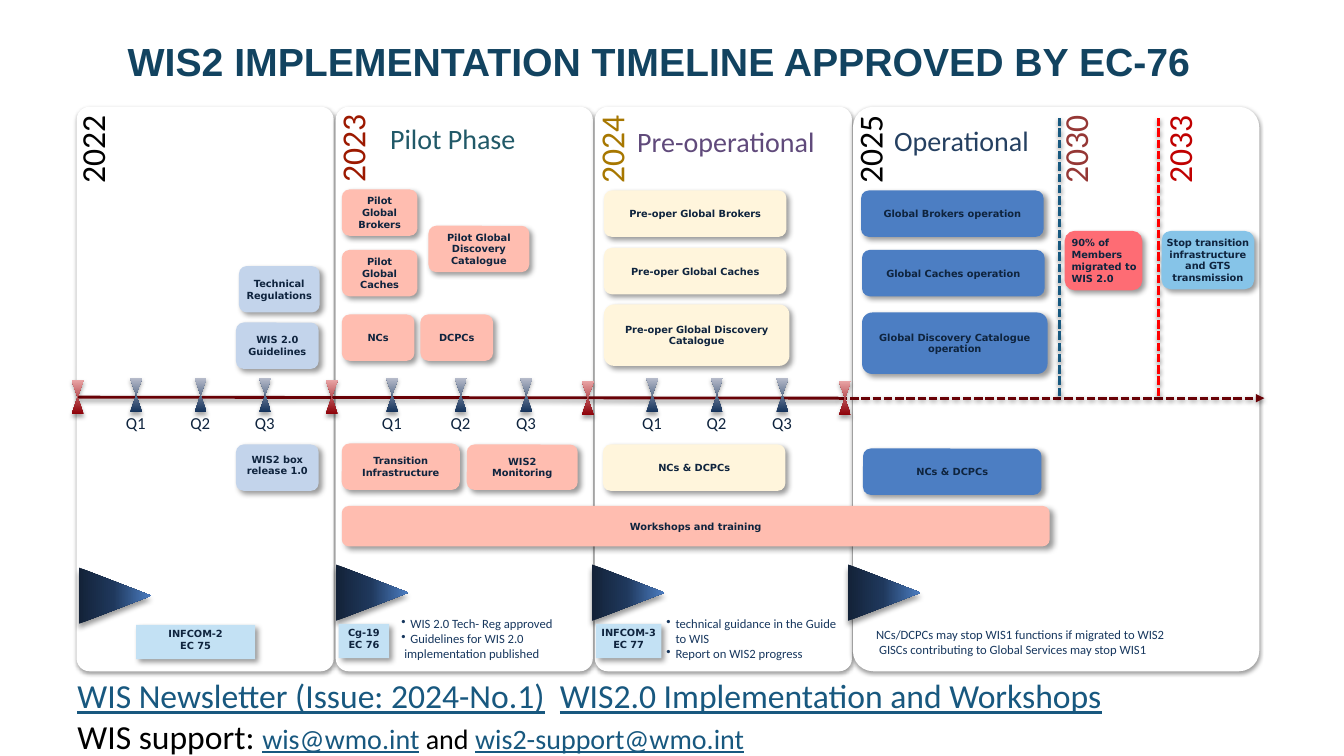
"""Build the WIS2 implementation timeline slide."""
import dataclasses
import typing

import lxml.etree
import pptx
import pptx.dml.color
import pptx.enum.dml
import pptx.enum.shapes
import pptx.enum.text
import pptx.oxml.ns
import pptx.util

Inches = pptx.util.Inches
Pt = pptx.util.Pt
RGBColor = pptx.dml.color.RGBColor
Preset = pptx.enum.shapes.MSO_SHAPE
Align = pptx.enum.text.PP_ALIGN
Anchor = pptx.enum.text.MSO_ANCHOR
qn = pptx.oxml.ns.qn

BLACK = RGBColor(0x00, 0x00, 0x00)
WHITE = RGBColor(0xFF, 0xFF, 0xFF)
INK = RGBColor(0x0F, 0x24, 0x3E)
NOTE = RGBColor(0x17, 0x37, 0x5E)
TITLE = RGBColor(0x12, 0x43, 0x60)
LINK = RGBColor(0x18, 0x58, 0x7F)
PINK = RGBColor(0xFF, 0xBD, 0xB0)
CREAM = RGBColor(0xFF, 0xF5, 0xDC)
BLUE = RGBColor(0x4C, 0x7E, 0xC3)
PALE_BLUE = RGBColor(0xC3, 0xD4, 0xEB)
ICE = RGBColor(0xC3, 0xE1, 0xF4)
SKY = RGBColor(0x86, 0xC4, 0xE8)
CORAL = RGBColor(0xFE, 0x6C, 0x74)
AXIS = RGBColor(0x69, 0x01, 0x06)
TEAL_LINE = RGBColor(0x18, 0x59, 0x80)
RED_LINE = RGBColor(0xFF, 0x00, 0x00)
RUST = RGBColor(0x9C, 0x19, 0x00)
GOLD = RGBColor(0xA7, 0x77, 0x00)
TEAL = RGBColor(0x21, 0x59, 0x68)
PURPLE = RGBColor(0x60, 0x4A, 0x7B)
NAVY = RGBColor(0x25, 0x40, 0x61)
BRICK = RGBColor(0x95, 0x37, 0x35)
DARK_RED = RGBColor(0xC0, 0x00, 0x00)

Area = tuple[float, float, float, float]
QUARTER_STOPS = ((0, "14325B"), (100, "B6BBCA"))
YEAR_STOPS = ((0, "8D0007"), (100, "E8A4A5"))
FLAG_STOPS = ((0, "132238"), (48, "1F385C"), (100, "4C7EC3"))
DEFAULT_INSETS = (0.1, 0.05, 0.1, 0.05)
SIDELESS_INSETS = (0, 0.05, 0, 0.05)
BASE_INSETS = (0, 0, 0, 0.05)


class Run(typing.NamedTuple):
    text: str
    size: float
    color: RGBColor
    underline: bool = False
    spacing: float = 0


class Line(typing.NamedTuple):
    runs: tuple[Run, ...]
    bullet: bool = False
    indent: float = 0


class Shadow(typing.NamedTuple):
    alpha: int
    blur: float
    distance: float
    angle: int


PANEL_SHADOW = Shadow(38, 3.1, 1.6, 90)
MARKER_SHADOW = Shadow(35, 3.1, 1.8, 90)
CARD_SHADOW = Shadow(40, 4, 3, 45)
FLAG_SHADOW = Shadow(40, 4, 3, 90)


@dataclasses.dataclass(frozen=True)
class Card:
    area: Area
    text: str
    fill: RGBColor
    insets: Area = DEFAULT_INSETS
    preset: Preset = Preset.ROUNDED_RECTANGLE
    align: Align = Align.CENTER


@dataclasses.dataclass(frozen=True)
class Year:
    panel_left: float
    panel_width: float
    label: str
    label_area: Area
    color: RGBColor
    marker: tuple[float, float]
    flag: tuple[float, float]
    quarters: tuple[float, ...] = ()


YEARS = (
    Year(0.76, 2.55, "2022", (-1.29, 3.11, 4.6, 0.51), BLACK, (0.71, 3.77), (0.86, 5.55), (1.29, 1.93, 2.57)),
    Year(3.33, 2.55, "2023", (1.29, 3.1, 4.6, 0.51), RUST, (3.23, 3.77), (3.41, 5.52), (3.83, 4.51, 5.16)),
    Year(5.9, 2.55, "2024", (3.86, 3.11, 4.6, 0.51), GOLD, (5.77, 3.78), (5.95, 5.52), (6.41, 7.05, 7.7)),
    Year(8.46, 4.03, "2025", (6.57, 2.96, 4.6, 0.81), BLACK, (8.32, 3.78), (8.49, 5.52)),
)
CARDS = (
    Card((3.39, 1.88, 0.75, 0.46), "Pilot Global Brokers", PINK),
    Card((3.39, 2.48, 0.75, 0.46), "Pilot Global Caches", PINK),
    Card((4.25, 2.24, 1, 0.46), "Pilot Global Discovery Catalogue", PINK),
    Card((3.39, 3.12, 0.72, 0.46), "NCs", PINK),
    Card((4.17, 3.12, 0.72, 0.46), "DCPCs", PINK),
    Card((2.34, 4.41, 0.82, 0.46), "WIS2 box release 1.0", PALE_BLUE, BASE_INSETS),
    Card((2.37, 2.64, 0.8, 0.46), "Technical Regulations", PALE_BLUE, SIDELESS_INSETS),
    Card((2.34, 3.2, 0.82, 0.46), "WIS 2.0\nGuidelines", PALE_BLUE, SIDELESS_INSETS),
    Card((3.39, 4.4, 1.17, 0.46), "Transition Infrastructure", PINK),
    Card((4.63, 4.41, 1.1, 0.45), "WIS2 Monitoring", PINK),
    Card((3.39, 5.02, 7.02, 0.4), "Workshops and training", PINK),
    Card((5.99, 1.89, 1.81, 0.46), "Pre-oper Global Brokers", CREAM),
    Card((5.99, 2.46, 1.81, 0.46), "Pre-oper Global Caches", CREAM),
    Card((5.99, 3.02, 1.84, 0.61), "Pre-oper Global Discovery Catalogue", CREAM),
    Card((5.98, 4.41, 1.81, 0.46), "NCs & DCPCs", CREAM),
    Card((8.54, 1.89, 1.81, 0.46), "Global Brokers operation", BLUE),
    Card((8.55, 2.48, 1.81, 0.46), "Global Caches operation", BLUE),
    Card((8.55, 3.1, 1.84, 0.61), "Global Discovery Catalogue operation", BLUE),
    Card((8.56, 4.45, 1.77, 0.46), "NCs & DCPCs", BLUE),
    Card((1.35, 6.2, 1.18, 0.34), "INFCOM-2\nEC 75", ICE, BASE_INSETS, Preset.RECTANGLE),
    Card((3.36, 6.19, 0.5, 0.34), "Cg-19\nEC 76", ICE, BASE_INSETS, Preset.RECTANGLE),
    Card((5.91, 6.19, 0.65, 0.34), "INFCOM-3\nEC 77", ICE, BASE_INSETS, Preset.RECTANGLE),
    Card((11.52, 2.29, 0.92, 0.58), "Stop transition infrastructure and GTS transmission", SKY, (0, 0, 0, 0)),
    Card((10.56, 2.29, 0.77, 0.59), "90% of Members migrated to WIS 2.0", CORAL, (0.04, 0, 0, 0), align=Align.LEFT),
)


def write_text(shape, lines, *, size=9.0, color=NOTE, font="Calibri", bold=False, align=Align.LEFT,
               anchor=Anchor.TOP, insets: Area = DEFAULT_INSETS, line_spacing: float | None = None) -> None:
    frame = shape.text_frame
    frame.word_wrap = True
    frame.vertical_anchor = anchor
    frame.margin_left, frame.margin_top, frame.margin_right, frame.margin_bottom = map(Inches, insets)
    if isinstance(lines, str):
        lines = [Line((Run(text, size, color),)) for text in lines.split("\n")]
    for index, line in enumerate(lines):
        paragraph = frame.add_paragraph() if index else frame.paragraphs[0]
        paragraph.alignment = align
        paragraph.line_spacing = line_spacing
        properties = paragraph._p.get_or_add_pPr()
        if line.indent:
            properties.set("marL", str(Inches(line.indent)))
        if line.bullet:
            properties.set("indent", str(-Inches(line.indent)))
            lxml.etree.SubElement(properties, qn("a:buChar"), char="•")
        for item in line.runs:
            run = paragraph.add_run()
            run.text = item.text
            run.font.name, run.font.size, run.font.bold = font, Pt(item.size), bold
            run.font.color.rgb = item.color
            run.font.underline = item.underline
            if item.spacing:
                run.font._element.set("spc", str(round(item.spacing * 100)))


def add_text(slide, area: Area, lines, *, rotation: float = 0, **text_format) -> None:
    box = slide.shapes.add_textbox(*map(Inches, area))
    box.rotation = rotation
    write_text(box, lines, **text_format)


def add_shadow(shape, shadow: Shadow) -> None:
    effects = lxml.etree.SubElement(shape.element.spPr, qn("a:effectLst"))
    outer = lxml.etree.SubElement(effects, qn("a:outerShdw"), blurRad=str(Pt(shadow.blur)),
                                  dist=str(Pt(shadow.distance)), dir=str(shadow.angle * 60000), rotWithShape="0")
    color = lxml.etree.SubElement(outer, qn("a:srgbClr"), val="000000")
    lxml.etree.SubElement(color, qn("a:alpha"), val=str(shadow.alpha * 1000))


def add_shape(slide, preset: Preset, area: Area, fill, *, shadow: Shadow | None = None, rotation: float = 0):
    shape = slide.shapes.add_shape(preset, *map(Inches, area))
    shape.rotation = rotation
    if isinstance(fill, RGBColor):
        shape.fill.solid()
        shape.fill.fore_color.rgb = fill
    else:
        shape.fill.gradient()
        shape.fill.gradient_angle = 90
        stops = shape.element.spPr.find(".//" + qn("a:gsLst"))
        stops.clear()
        for position, value in fill:
            stop = lxml.etree.SubElement(stops, qn("a:gs"), pos=str(position * 1000))
            lxml.etree.SubElement(stop, qn("a:srgbClr"), val=value)
    shape.line.fill.background()
    if shadow:
        add_shadow(shape, shadow)
    else:
        shape.shadow.inherit = False
    return shape


def add_line(slide, ends: Area, color: RGBColor, *, dashed: bool = True, arrow: bool = False) -> None:
    line = slide.shapes.add_connector(pptx.enum.shapes.MSO_CONNECTOR.STRAIGHT, *map(Inches, ends))
    line.line.color.rgb = color
    line.line.width = Pt(2)
    if dashed:
        line.line.dash_style = pptx.enum.dml.MSO_LINE.SQUARE_DOT
    if arrow:
        lxml.etree.SubElement(line.element.spPr.find(qn("a:ln")), qn("a:tailEnd"), type="triangle")
    add_shadow(line, PANEL_SHADOW)


def add_years(slide) -> None:
    for year in YEARS:
        panel = add_shape(slide, Preset.ROUNDED_RECTANGLE, (year.panel_left, 1.06, year.panel_width, 5.6),
                          WHITE, shadow=PANEL_SHADOW)
        panel.adjustments[0] = 0.05
        add_text(slide, year.label_area, year.label, rotation=270, size=24, color=year.color,
                 align=Align.RIGHT, insets=(0, 0, 0.08, 0), line_spacing=0.9)
    for year in YEARS[1:]:
        add_shape(slide, Preset.FLOWCHART_EXTRACT, (year.panel_left - 0.03, 3.76, 0.45, 0.38), WHITE, rotation=90)


def add_axis(slide) -> None:
    add_line(slide, (0.77, 3.94, 8.32, 3.95), AXIS, dashed=False)
    add_line(slide, (8.32, 3.95, 12.54, 3.95), AXIS, arrow=True)
    for left, color, label, label_left, label_color in (
            (10.51, TEAL_LINE, "2030", 10.15, BRICK), (11.49, RED_LINE, "2033", 11.18, DARK_RED)):
        add_line(slide, (left, 3.93, left, 1.17), color)
        add_text(slide, (label_left, 1.16, 1.02, 0.5), label, rotation=270, size=24, color=label_color)
    for year in YEARS:
        add_shape(slide, Preset.FLOWCHART_COLLATE, (*year.marker, 0.12, 0.34), YEAR_STOPS, shadow=MARKER_SHADOW)
        for number, left in enumerate(year.quarters, 1):
            add_shape(slide, Preset.FLOWCHART_COLLATE, (left, 3.75, 0.12, 0.34), QUARTER_STOPS, shadow=MARKER_SHADOW)
            add_text(slide, (left - 0.14, 4.05, 0.41, 0.3), f"Q{number}", size=12, color=INK)
        add_shape(slide, Preset.ISOSCELES_TRIANGLE, (*year.flag, 0.56, 0.72), FLAG_STOPS,
                  shadow=FLAG_SHADOW, rotation=90)


def add_cards(slide) -> None:
    for card in CARDS:
        shape = add_shape(slide, card.preset, card.area, card.fill, shadow=CARD_SHADOW)
        write_text(shape, card.text, size=7, color=INK, font="DejaVu Sans", bold=True,
                   align=card.align, anchor=Anchor.MIDDLE, insets=card.insets)


def note(text: str, *, bullet: bool = False, indent: float = 0) -> Line:
    return Line((Run(text, 9, NOTE),), bullet, 0.09 if bullet else indent)


def add_captions(slide) -> None:
    add_text(slide, (0.66, 0.32, 11.75, 0.57), "WIS2 IMPLEMENTATION TIMELINE APPROVED BY EC-76",
             size=28, color=TITLE, font="Arial", bold=True, align=Align.CENTER)
    add_text(slide, (3.77, 1.16, 1.81, 0.44), "Pilot Phase", size=20, color=TEAL)
    add_text(slide, (6.32, 1.19, 2.25, 0.44), "Pre-operational", size=20, color=PURPLE, insets=(0, 0.05, 0.1, 0.05))
    add_text(slide, (8.77, 1.18, 1.83, 0.44), "Operational", size=20, color=NAVY)
    add_text(slide, (3.98, 6.06, 1.61, 0.56), (
        note("WIS 2.0 Tech- Reg approved", bullet=True), note("Guidelines for WIS 2.0", bullet=True),
        note("implementation published", indent=0.03)), insets=SIDELESS_INSETS)
    add_text(slide, (6.61, 6.06, 1.71, 0.56), (
        note("technical guidance in the Guide to WIS", bullet=True),
        note("Report on WIS2 progress", bullet=True)), insets=SIDELESS_INSETS)
    add_text(slide, (8.59, 6.17, 3.08, 0.4), (
        note("NCs/DCPCs may stop WIS1 functions if migrated to WIS2"),
        note("GISCs contributing to Global Services may stop WIS1", indent=0.03)))
    add_text(slide, (0.67, 6.65, 11.46, 0.85), (
        Line((Run("WIS Newsletter (Issue: 2024-No.1)", 24, LINK, True), Run(" ", 24, BLACK, spacing=5.4),
              Run("WIS2.0 Implementation and Workshops", 24, LINK, True))),
        Line((Run("WIS support: ", 24, BLACK), Run("wis@wmo.int", 20, LINK, True),
              Run(" and ", 20, BLACK), Run("wis2-support@wmo.int", 20, LINK, True)))))


def main() -> None:
    presentation = pptx.Presentation()
    presentation.slide_width, presentation.slide_height = Inches(13.33), Inches(7.5)
    slide = presentation.slides.add_slide(presentation.slide_layouts[6])
    for draw in (add_years, add_axis, add_cards, add_captions):
        draw(slide)
    presentation.save("out.pptx")


if __name__ == "__main__":
    main()
